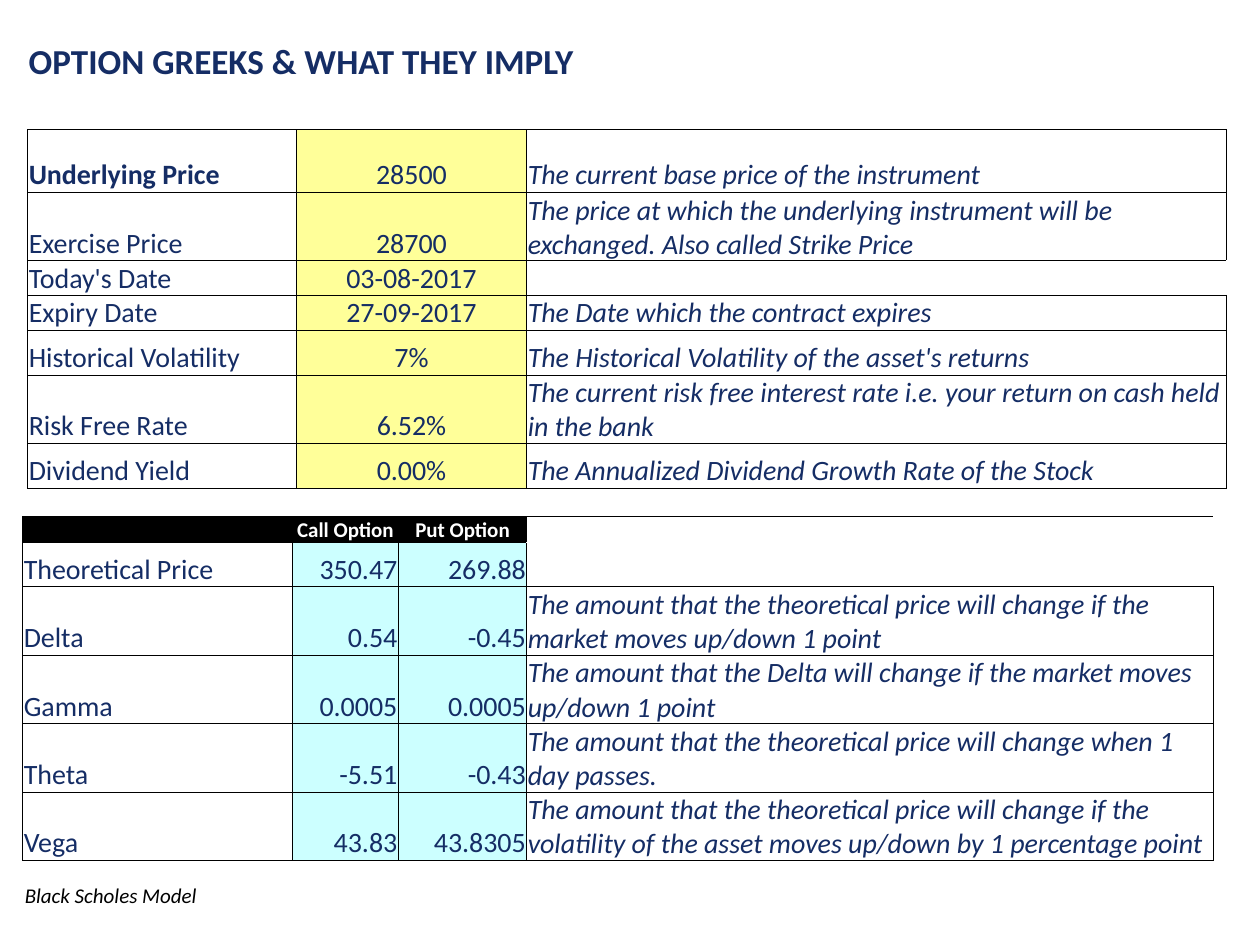
from lxml import etree
from pptx import Presentation
from pptx import util as u
from pptx.dml.color import RGBColor
from pptx.enum import shapes, text
from pptx.oxml.ns import qn

COLORS = {
    "navy": "152D65",
    "black": "000000",
    "white": "FFFFFF",
    "yellow": "FFFF99",
    "cyan": "CCFFFF",
}
LEFT, CENTER, RIGHT = text.PP_ALIGN.LEFT, text.PP_ALIGN.CENTER, text.PP_ALIGN.RIGHT

INPUTS = [
    ("Underlying Price", "28500", "The current base price of the instrument"),
    ("Exercise Price", "28700",
     "The price at which the underlying instrument will be exchanged. Also called Strike Price"),
    ("Today's Date", "03-08-2017", ""),
    ("Expiry Date", "27-09-2017", "The Date which the contract expires"),
    ("Historical Volatility", "7%", "The Historical Volatility of the asset's returns"),
    ("Risk Free Rate", "6.52%",
     "The current risk free interest rate i.e. your return on cash held in the bank"),
    ("Dividend Yield", "0.00%", "The Annualized Dividend Growth Rate of the Stock"),
]
GREEKS = [
    ("", "Call Option", "Put Option", ""),
    ("Theoretical Price", "350.47", "269.88", ""),
    ("Delta", "0.54", "-0.45",
     "The amount that the theoretical price will change if the market moves up/down 1 point"),
    ("Gamma", "0.0005", "0.0005",
     "The amount that the Delta will change if the market moves up/down 1 point"),
    ("Theta", "-5.51", "-0.43",
     "The amount that the theoretical price will change when 1 day passes."),
    ("Vega", "43.83", "43.8305",
     "The amount that the theoretical price will change if the volatility of the asset "
     "moves up/down by 1 percentage point"),
]


def rgb(name):
    return RGBColor.from_string(COLORS[name])


def write(frame, words, size=16, color="navy", bold=False, italic=False, align=LEFT):
    """Fill the first paragraph; an empty one only keeps its text size."""
    para = frame.paragraphs[0]
    para.alignment = align
    if not words:
        etree.SubElement(para._p, qn("a:endParaRPr"), sz=str(size * 100))
        return
    span = para.add_run()
    span.text = words
    font = span.font
    font.name, font.size = "Calibri", u.Pt(size)
    font.bold, font.italic = bold, italic
    font.color.rgb = rgb(color)


def draw_borders(cell, sides):
    properties = cell._tc.get_or_add_tcPr()
    for side in sides:
        line = etree.SubElement(properties, qn(f"a:ln{side}"), w=str(u.Pt(0.5)))
        fill = etree.SubElement(line, qn("a:solidFill"))
        etree.SubElement(fill, qn("a:srgbClr"), val=COLORS["black"])


class SlideBuilder:
    def __init__(self, page):
        self.page = page

    def title(self, words, left, top, width, height):
        box = self.page.shapes.add_textbox(*map(u.Cm, (left, top, width, height)))
        frame = box.text_frame
        frame.word_wrap = True
        frame.margin_left = frame.margin_right = frame.margin_top = frame.margin_bottom = 0
        write(frame, words, size=20, bold=True)

    def label(self, words, left, top, width, height):
        box = self.page.shapes.add_shape(
            shapes.MSO_SHAPE.RECTANGLE, *map(u.Cm, (left, top, width, height)))
        box.shadow.inherit = False
        box.fill.solid()
        box.fill.fore_color.rgb = rgb("white")
        box.line.fill.background()
        box.text_frame.word_wrap = False
        box.text_frame.vertical_anchor = text.MSO_ANCHOR.MIDDLE
        write(box.text_frame, words, size=12, color="black", italic=True)

    def table(self, rows, left, top, widths, heights, style):
        """Draw a grid; style(row, column) gives fill, border sides and text format."""
        frame = self.page.shapes.add_table(
            len(rows), len(widths),
            *map(u.Cm, (left, top, sum(widths), sum(heights))))
        grid = frame.table
        grid.first_row = grid.horz_banding = False
        for column, width in zip(grid.columns, widths):
            column.width = u.Cm(width)
        for r, (words, height) in enumerate(zip(rows, heights)):
            grid.rows[r].height = u.Cm(height)
            for c, word in enumerate(words):
                fill, sides, form = style(r, c)
                self.cell(grid.cell(r, c), word, fill, sides, form)

    def cell(self, cell, words, fill, sides, form):
        cell.margin_left = cell.margin_right = cell.margin_top = u.Cm(0.02)
        cell.margin_bottom = 0
        cell.vertical_anchor = text.MSO_ANCHOR.BOTTOM
        draw_borders(cell, sides)
        if fill:
            cell.fill.solid()
            cell.fill.fore_color.rgb = rgb(fill)
        else:
            cell.fill.background()
        write(cell.text_frame, words, **form)


def input_style(row, column):
    if column == 1:
        return "yellow", "LRTB", {"align": CENTER}
    if column == 2:
        return None, "LRTB" if INPUTS[row][2] else "LTB", {"italic": True}
    return None, "LRTB", {"bold": row == 0}


def greek_style(row, column):
    if column == 3:
        sides = {0: "LT", 1: "LB"}.get(row, "LRTB")
        return None, sides, {"italic": True, "size": 12 if row == 0 else 16}
    if row == 0:
        return "black", "LRTB", {
            "size": 12, "color": "white", "bold": True, "align": CENTER}
    if column == 0:
        return None, "LRTB", {}
    return "cyan", "LRTB", {"align": RIGHT}


def main():
    deck = Presentation()
    deck.slide_width, deck.slide_height = u.Cm(25.4), u.Cm(19.05)
    page = deck.slides.add_slide(deck.slide_layouts[6])
    builder = SlideBuilder(page)
    builder.title("OPTION GREEKS & WHAT THEY IMPLY", 0.58, 0.79, 18.39, 0.86)
    builder.table(INPUTS, 0.56, 2.61, [5.41, 4.65, 14.1],
                  [1.27, 1.37, 0.69, 0.69, 0.91, 1.37, 0.91], input_style)
    builder.table(GREEKS, 0.46, 10.41, [5.44, 2.13, 2.59, 13.84],
                  [0.53, 0.89] + [1.38] * 4, greek_style)
    builder.label("Black Scholes Model", 0.25, 17.7, 4.09, 0.71)
    deck.save("out.pptx")


if __name__ == "__main__":
    main()
